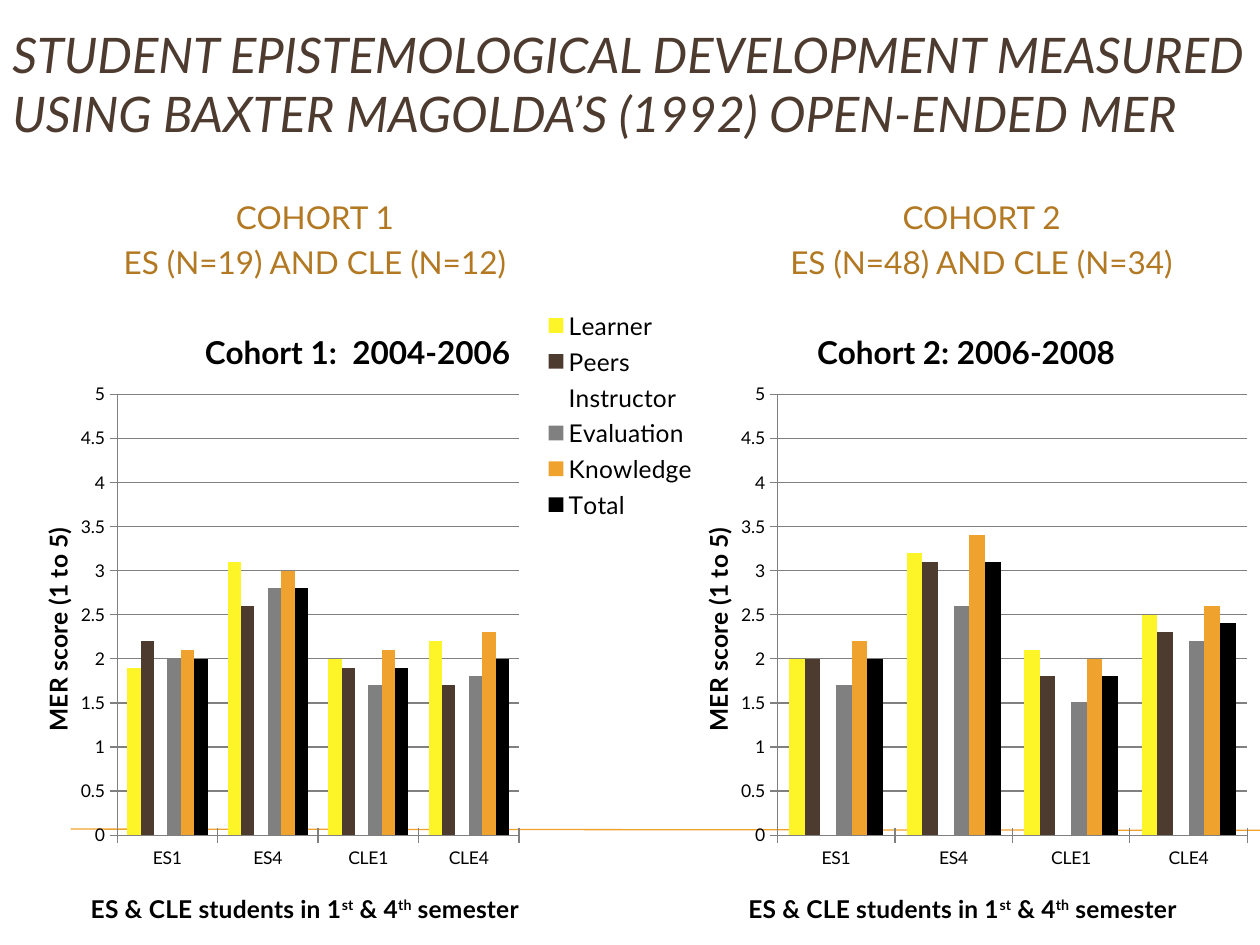
from lxml import etree
from pptx import Presentation
from pptx.chart.data import CategoryChartData
from pptx.dml.color import RGBColor
from pptx.enum.chart import XL_CHART_TYPE, XL_LEGEND_POSITION, XL_TICK_MARK
from pptx.enum.shapes import MSO_CONNECTOR
from pptx.enum.text import MSO_ANCHOR, PP_ALIGN
from pptx.oxml.ns import qn
from pptx.util import Inches, Pt

COLUMN = XL_CHART_TYPE.COLUMN_CLUSTERED
RIGHT = XL_LEGEND_POSITION.RIGHT
CROSS = XL_TICK_MARK.CROSS
STRAIGHT = MSO_CONNECTOR.STRAIGHT
MIDDLE = MSO_ANCHOR.MIDDLE
LEFT, CENTER = PP_ALIGN.LEFT, PP_ALIGN.CENTER

YELLOW = RGBColor(0xFD, 0xF5, 0x27)
BROWN = RGBColor(0x4E, 0x3B, 0x30)
WHITE = RGBColor(0xFF, 0xFF, 0xFF)
GRAY = RGBColor(0x80, 0x80, 0x80)
ORANGE = RGBColor(0xF0, 0xA2, 0x2E)
BLACK = RGBColor(0, 0, 0)
GOLD = RGBColor(0xB2, 0x78, 0x22)

FONT = "Lato"
FILLS = [YELLOW, BROWN, WHITE, GRAY, ORANGE, BLACK]
CATS = ["ES1", "ES4", "CLE1", "CLE4"]
X_TITLE = [("ES & CLE students in 1", False), ("st", True), (" & 4", False),
           ("th", True), (" semester", False)]
Y_TITLE = [("MER score (1 to 5)", False)]


def place(part, box, frame):
    """Pin a chart part at a slide position (left, top[, width, height])."""
    for old in part.findall(qn("c:layout")):
        part.remove(old)
    layout = etree.Element(qn("c:layout"))
    manual = etree.SubElement(layout, qn("c:manualLayout"))
    if part.tag == qn("c:plotArea"):
        etree.SubElement(manual, qn("c:layoutTarget")).set("val", "inner")
    for key in ("xMode", "yMode"):
        etree.SubElement(manual, qn("c:" + key)).set("val", "edge")
    left, top, width, height = frame
    parts = [(box[0] - left) / width, (box[1] - top) / height]
    if len(box) == 4:
        parts += [box[2] / width, box[3] / height]
    for key, value in zip("xywh", parts):
        etree.SubElement(manual, qn("c:" + key)).set("val", f"{value:.4f}")
    first = part[0].tag in (qn("c:tx"), qn("c:legendPos"))
    part.insert(1 if first else 0, layout)


class Deck:
    def __init__(self):
        self.prs = Presentation()
        self.prs.slide_width, self.prs.slide_height = Inches(10), Inches(7.5)
        self.slide = self.prs.slides.add_slide(self.prs.slide_layouts[6])

    def style(self, font, size, color, bold=False, italic=False):
        font.name, font.size = FONT, Pt(size)
        font.bold, font.italic = bold, italic
        font.color.rgb = color

    def line(self, x1, y1, x2, y2, color):
        rule = self.slide.shapes.add_connector(
            STRAIGHT, Inches(x1), Inches(y1), Inches(x2), Inches(y2))
        rule.line.color.rgb, rule.line.width = color, Pt(0.75)
        etree.SubElement(rule._element.spPr, qn("a:effectLst"))

    def text(self, box, words, size, color, align=LEFT, italic=False, gap=0):
        frame = self.slide.shapes.add_textbox(*map(Inches, box)).text_frame
        frame.word_wrap, frame.vertical_anchor = True, MIDDLE
        frame.text = words
        for para in frame.paragraphs:
            para.alignment, para.space_before = align, Pt(gap)
            self.style(para.runs[0].font, size, color, italic=italic)

    def label(self, title, pieces, size, spot, frame):
        para = title.text_frame.paragraphs[0]
        for words, raised in pieces:
            run = para.add_run()
            run.text = words
            self.style(run.font, size, BLACK, bold=True)
            if raised:
                run.font._element.set("baseline", "30000")
        place(title._element, spot, frame)

    def axis(self, axis, pieces, spot, frame):
        axis.major_tick_mark = CROSS
        axis.format.line.color.rgb = GRAY
        self.label(axis.axis_title, pieces, 14, spot, frame)

    def chart(self, frame, title, names, rows, plot, spots, legend=None):
        data = CategoryChartData()
        data.categories = CATS
        for name, row in zip(names, rows):
            data.add_series(name, row)
        chart = self.slide.shapes.add_chart(
            COLUMN, *map(Inches, frame), data).chart
        self.style(chart.font, 10, BLACK)

        # Bars
        bars = chart.plots[0]
        bars.gap_width, bars.overlap, bars.vary_by_categories = 150, 0, False
        for series, color in zip(bars.series, FILLS):
            series.invert_if_negative = False
            series.format.fill.solid()
            series.format.fill.fore_color.rgb = color
        place(chart._chartSpace.find(".//" + qn("c:plotArea")), plot, frame)

        # Titles and axes
        head, below, side = spots
        self.label(chart.chart_title, [(title, False)], 18, head, frame)
        self.axis(chart.category_axis, X_TITLE, below, frame)
        score = chart.value_axis
        self.axis(score, Y_TITLE, side, frame)
        score.minimum_scale, score.maximum_scale = 0, 5
        score.major_unit = 0.5
        score.major_gridlines.format.line.color.rgb = GRAY

        # Legend
        chart.has_legend = legend is not None
        if legend:
            chart.legend.position = RIGHT
            chart.legend.include_in_layout = False
            self.style(chart.legend.font, 14, BLACK)
            place(chart.legend._element, legend, frame)


def main():
    deck = Deck()

    # Rule and headings
    deck.line(0.56, 6.58, 10, 6.59, ORANGE)
    deck.text((0, 0, 10, 1.33), "STUDENT EPISTEMOLOGICAL DEVELOPMENT MEASURED "
              "USING BAXTER MAGOLDA’S (1992) OPEN-ENDED MER",
              28, BROWN, italic=True)
    for left, width, words in [
            (0.33, 4.34, "COHORT 1\nES (N=19) AND CLE (N=12)"),
            (5.58, 4.42, "COHORT 2\nES (N=48) AND CLE (N=34)")]:
        deck.text((left, 1.42, width, 0.96), words, 18, GOLD, CENTER, gap=3.6)

    # Cohort 2 chart
    deck.chart((5.25, 2.33, 4.75, 5.17), "Cohort 2: 2006-2008",
               [f"Series {n}" for n in range(1, 7)],
               [(2, 3.2, 2.1, 2.5), (2, 3.1, 1.8, 2.3), (1.9, 3, 1.7, 2.4),
                (1.7, 2.6, 1.5, 2.2), (2.2, 3.4, 2, 2.6), (2, 3.1, 1.8, 2.4)],
               (6.17, 3.13, 3.73, 3.5),
               [(6.44, 2.57), (5.91, 7.04), (5.52, 4.15)])

    # Cohort 1 chart, with the legend for both
    deck.chart((0, 2.33, 5.58, 5.17), "Cohort 1:  2004-2006",
               ["Learner", "Peers", "Instructor", "Evaluation", "Knowledge",
                "Total"],
               [(1.9, 3.1, 2, 2.2), (2.2, 2.6, 1.9, 1.7), (1.9, 2.7, 1.9, 1.9),
                (2, 2.8, 1.7, 1.8), (2.1, 3, 2.1, 2.3), (2, 2.8, 1.9, 2)],
               (0.93, 3.13, 3.19, 3.5),
               [(1.58, 2.57), (0.69, 7.04), (0.28, 4.15)],
               legend=(4.3, 2.42, 1.25, 1.75))

    deck.prs.save("out.pptx")


if __name__ == "__main__":
    main()
